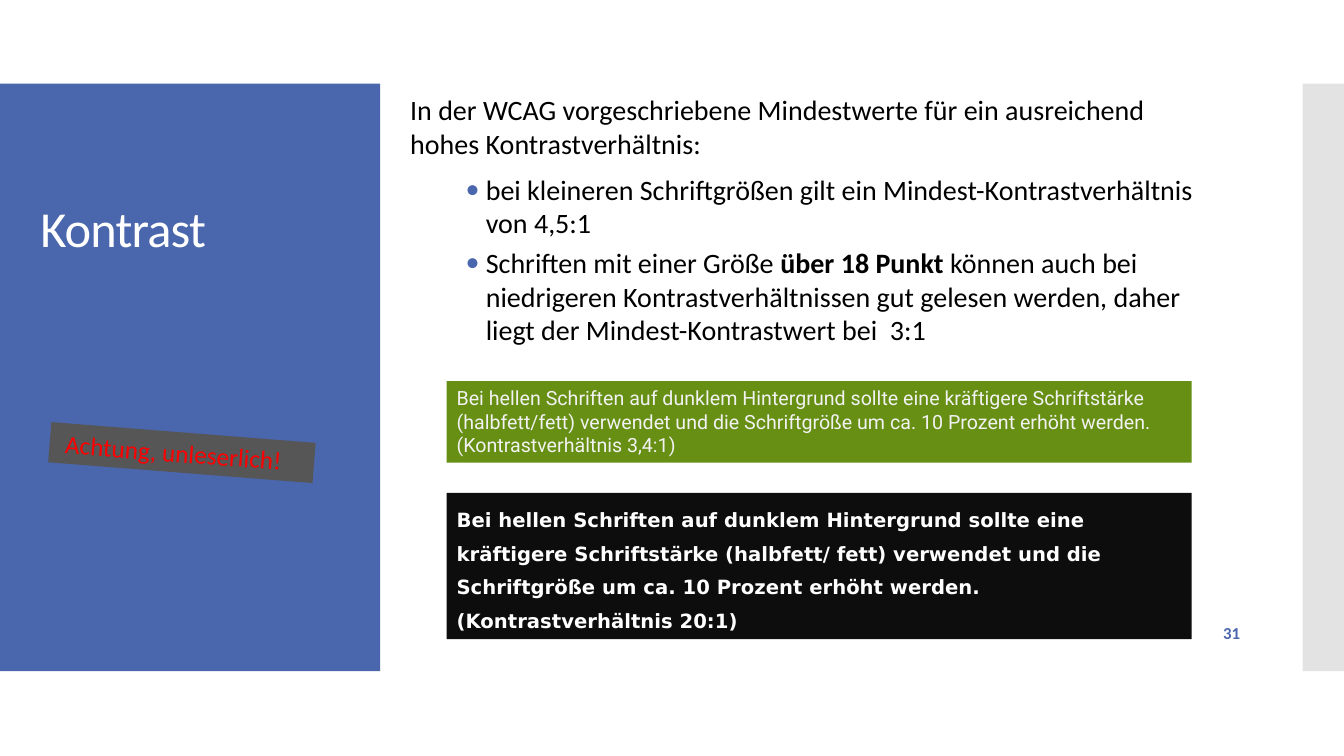
from lxml.etree import SubElement
from pptx import Presentation
from pptx.dml.color import RGBColor
from pptx.enum.shapes import MSO_SHAPE as Shape
from pptx.enum.text import MSO_ANCHOR as Anchor, MSO_AUTO_SIZE as AutoSize, PP_ALIGN as Align
from pptx.oxml.ns import qn
from pptx.util import Inches, Pt

COLORS = {
    "blue": "4A66AC", "grey": "C8C8C8", "green": "668F13", "night": "0D0D0D",
    "slate": "565656", "black": "000000", "white": "FFFFFF", "pale": "F2F2F2",
    "red": "FF0000",
}


def rgb(name):
    """Return the named colour."""
    return RGBColor.from_string(COLORS[name])


class SlideBuilder:
    """Holds the style and the current slide."""

    def __init__(self, deck, font="Calibri"):
        """Add a title-only page to the deck."""
        self.font = font
        self.page = deck.slides.add_slide(deck.slide_layouts[5])

    def paragraph(self, box, spans, size, color, first=True, font=None, spacing=0, **para_format):
        """Put one paragraph of (text, bold) spans into a box."""
        frame = box.text_frame
        para = frame.paragraphs[0] if first else frame.add_paragraph()
        for name, value in {"alignment": Align.LEFT, **para_format}.items():
            setattr(para, name, value)
        for text, bold in spans:
            span = para.add_run()
            span.text = text
            values = {"name": font or self.font, "size": Pt(size), "bold": bold}
            for name, value in values.items():
                setattr(span.font, name, value)
            span.font.color.rgb = rgb(color)
            if spacing:
                span.font._element.set("spc", str(spacing))
        return para

    def set_frame(self, box, anchor):
        """Make a box wrap its text, without resizing, at an anchor."""
        values = {"word_wrap": True, "auto_size": AutoSize.NONE, "vertical_anchor": anchor}
        for name, value in values.items():
            setattr(box.text_frame, name, value)

    def title(self, text, left, top, width, height):
        """Place the title in front of the panels."""
        box = self.page.shapes.title
        values = {"left": left, "top": top, "width": width, "height": height}
        for name, value in values.items():
            setattr(box, name, Inches(value))
        self.set_frame(box, Anchor.MIDDLE)
        self.paragraph(box, [(text, False)], 36, "white", spacing=-60, line_spacing=0.9)
        box.element.getparent().append(box.element)

    def text(self, left, top, width, height):
        """Add an empty text box with middle anchoring."""
        box = self.page.shapes.add_textbox(*map(Inches, (left, top, width, height)))
        self.set_frame(box, Anchor.MIDDLE)
        return box

    def bullet(self, box, spans, size, color, mark_color, **para_format):
        """Add an indented bullet paragraph to a box."""
        para = self.paragraph(box, spans, size, color, first=False, **para_format)
        props = para._p.get_or_add_pPr()
        props.set("marL", str(Inches(0.75)))
        props.set("indent", str(Inches(-0.2)))
        mark = SubElement(SubElement(props, qn("a:buClr")), qn("a:srgbClr"))
        mark.set("val", COLORS[mark_color])
        SubElement(props, qn("a:buFont")).set("typeface", self.font)
        SubElement(props, qn("a:buChar")).set("char", "•")

    def panel(self, color, left, top, width, height, turn=0, opacity=100):
        """Add a plain filled rectangle."""
        box = self.page.shapes.add_shape(
            Shape.RECTANGLE, *map(Inches, (left, top, width, height)))
        box.shadow.inherit = False
        box.fill.solid()
        box.fill.fore_color.rgb = rgb(color)
        box.line.fill.background()
        box.rotation = turn
        if opacity < 100:
            fill = box.element.spPr.find(qn("a:solidFill"))
            SubElement(fill[0], qn("a:alpha")).set("val", str(opacity * 1000))
        self.set_frame(box, Anchor.TOP)
        return box


def main():
    """Build the contrast slide."""
    deck = Presentation()
    deck.slide_width, deck.slide_height = Inches(13.33), Inches(7.5)
    slide = SlideBuilder(deck)

    slide.panel("blue", 0, 0.83, 3.77, 5.83)
    slide.panel("grey", 12.92, 0.83, 0.41, 5.83, opacity=50)

    body = slide.text(3.97, 0.23, 8.17, 3.9)
    intro = "In der WCAG vorgeschriebene Mindestwerte für ein ausreichend hohes Kontrastverhältnis:"
    slide.paragraph(body, [(intro, False)], 20, "black", space_before=Pt(12), space_after=Pt(6))
    rules = [
        ([("bei kleineren Schriftgrößen gilt ein Mindest-Kontrastverhältnis von 4,5:1", False)], 2),
        ([("Schriften mit einer Größe ", False), ("über 18 Punkt ", True),
          ("können auch bei niedrigeren Kontrastverhältnissen gut gelesen werden, "
           "daher liegt der Mindest-Kontrastwert bei  3:1", False)], 6),
    ]
    for spans, after in rules:
        slide.bullet(body, spans, 20, "black", "blue",
                     space_before=Pt(2.5), space_after=Pt(after))

    number = slide.text(9.4, 6.08, 3, 0.4)
    slide.paragraph(number, [("31", True)], 12, "blue", alignment=Align.RIGHT)

    advice = ("Bei hellen Schriften auf dunklem Hintergrund sollte eine kräftigere Schriftstärke "
              "({}) verwendet und die Schriftgröße um ca. 10 Prozent erhöht werden. "
              "(Kontrastverhältnis {})")
    samples = [
        ("green", 3.78, 0.81, "halbfett/fett", "3,4:1", "pale", "Roboto", False, None),
        ("night", 4.89, 1.45, "halbfett/ fett", "20:1", "white", "DejaVu Sans", True, Pt(24)),
    ]
    for fill, top, height, weight, ratio, color, font, bold, leading in samples:
        box = slide.panel(fill, 4.43, top, 7.39, height)
        slide.paragraph(box, [(advice.format(weight, ratio), bold)], 14, color,
                        font=font, line_spacing=leading)

    warning = slide.panel("slate", 0.49, 4.29, 2.63, 0.4, turn=4.5)
    slide.paragraph(warning, [(" Achtung, unleserlich!", False)], 18, "red")

    slide.title("Kontrast", 0.3, 1.21, 3.22, 2.17)
    deck.save("out.pptx")


if __name__ == "__main__":
    main()
